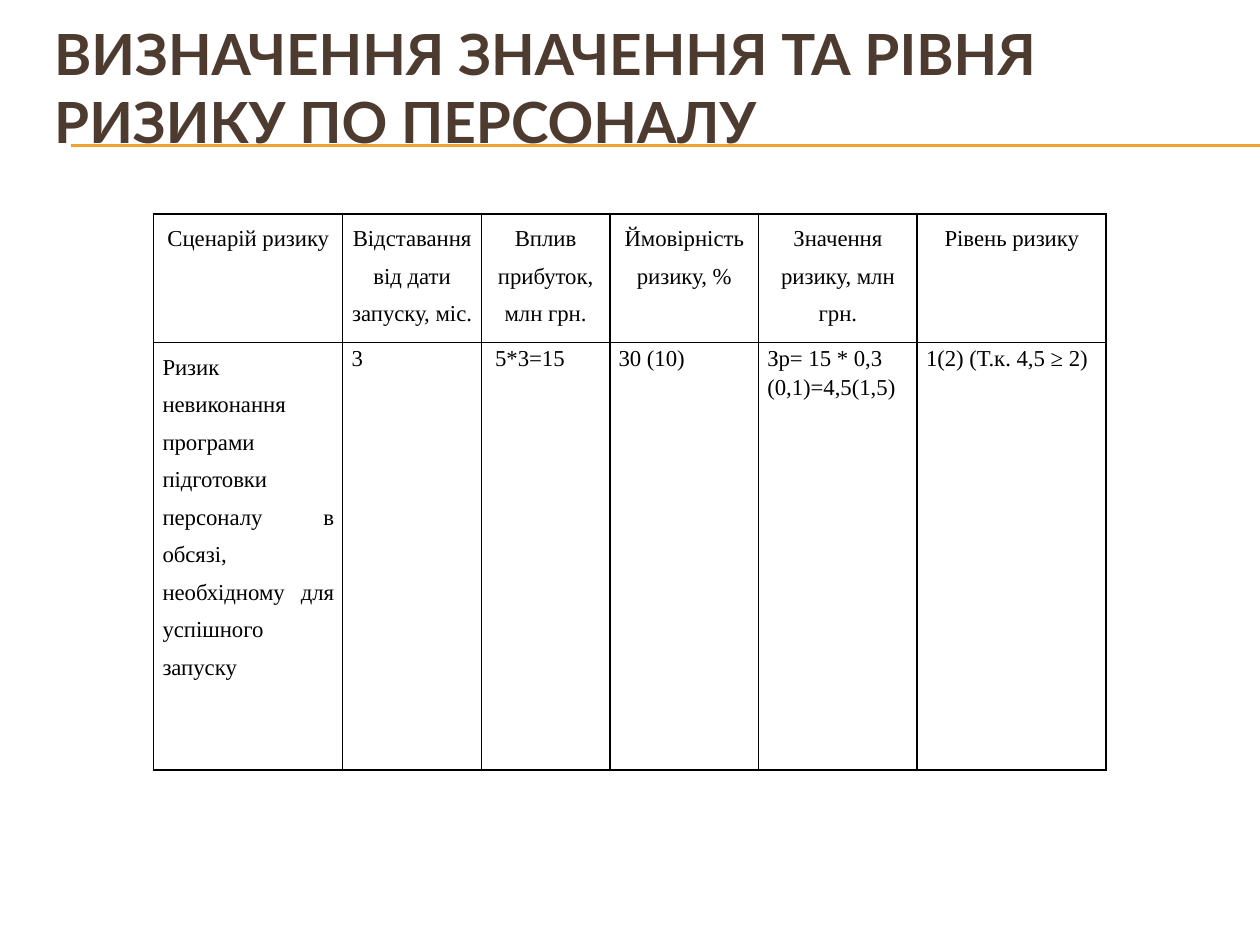
"""Build a slide with a table of staff risk value and level."""
from lxml.etree import SubElement
from pptx import Presentation
from pptx.dml.color import RGBColor
from pptx.enum.shapes import MSO_CONNECTOR as Connector
from pptx.enum.text import MSO_ANCHOR as Anchor, PP_ALIGN as Align
from pptx.oxml.ns import qn
from pptx.util import Inches, Pt

COLUMNS, ROWS = 100, 75


def colour(code):
    return RGBColor.from_string(code)


class RiskSlide:
    title_font, table_font = "Lato", "Times New Roman"
    title_colour, rule_colour, ink = "4E3B30", "F0A22E", "000000"
    title_size, table_size = 32.4, 13

    def __init__(self, deck):
        self.column = deck.slide_width / COLUMNS
        self.row = deck.slide_height / ROWS
        self.slide = deck.slides.add_slide(deck.slide_layouts[5])

    def place(self, left, top, width, height):
        return (round(left * self.column), round(top * self.row),
                round(width * self.column), round(height * self.row))

    def style(self, paragraph, font, size, code, align, spacing, bold=False):
        paragraph.alignment, paragraph.line_spacing = align, spacing
        paragraph.font.name, paragraph.font.size = font, Pt(size)
        paragraph.font.bold = bold
        paragraph.font.color.rgb = colour(code)

    def title(self, text, area):
        box = self.slide.shapes.title
        box.left, box.top, box.width, box.height = self.place(*area)
        frame = box.text_frame
        frame.text = text
        frame.word_wrap = True
        frame.vertical_anchor = Anchor.MIDDLE
        frame.margin_bottom = Inches(0.59)
        paragraph = frame.paragraphs[0]
        paragraph.space_before = Pt(0)
        self.style(paragraph, self.title_font, self.title_size,
                   self.title_colour, Align.LEFT, 1.0, True)
        self.slide.shapes.element.append(box.element)

    def rule(self, left, right, level):
        x, y, width, _ = self.place(left, level, right - left, 0)
        line = self.slide.shapes.add_connector(
            Connector.STRAIGHT, x, y, x + width, y)
        line.line.color.rgb = colour(self.rule_colour)
        line.line.width = Pt(0.75)
        SubElement(line.element.spPr, qn("a:effectLst"))

    def borders(self, cell):
        properties = cell._tc.get_or_add_tcPr()
        for side in ("lnL", "lnR", "lnT", "lnB"):
            edge = SubElement(properties, qn(f"a:{side}"), w=str(Pt(1)))
            fill = SubElement(edge, qn("a:solidFill"))
            SubElement(fill, qn("a:srgbClr"), val=self.ink)

    def cell(self, cell, text, align, spacing, indent=0):
        cell.text = text
        cell.margin_left = Inches(0.07 + indent)
        cell.margin_right = Inches(0.07)
        cell.margin_top = cell.margin_bottom = 0
        self.style(cell.text_frame.paragraphs[0], self.table_font,
                   self.table_size, self.ink, align, spacing)
        self.borders(cell)
        cell.fill.background()

    def table(self, left, top, widths, heights, header, values):
        area = self.place(left, top, sum(widths), sum(heights))
        table = self.slide.shapes.add_table(
            len(heights), len(widths), *area).table
        table.first_row = table.horz_banding = False
        for column, width in zip(table.columns, widths):
            column.width = round(width * self.column)
        for row, height in zip(table.rows, heights):
            row.height = round(height * self.row)
        for index, text in enumerate(header):
            self.cell(table.cell(0, index), text, Align.CENTER, 1.5)
        scenario, *figures = values
        self.cell(table.cell(1, 0), scenario, Align.JUSTIFY, 1.5)
        for index, text in enumerate(figures, 1):
            indent = 0.04 if index == 2 else 0
            self.cell(table.cell(1, index), text, Align.LEFT, 1.15, indent)


def main():
    deck = Presentation()
    deck.slide_width, deck.slide_height = Inches(10), Inches(7.5)
    page = RiskSlide(deck)
    for level in (11.5, 11.6):
        page.rule(5.6, COLUMNS, level)
    page.title("ВИЗНАЧЕННЯ ЗНАЧЕННЯ ТА РІВНЯ РИЗИКУ ПО ПЕРСОНАЛУ",
               (3.3, 5, 83.7, 9.2))
    page.table(
        12.2, 17, (15, 11, 10.2, 11.8, 12.6, 15), (10.2, 33.9),
        ("Сценарій ризику", "Відставання від дати запуску, міс.",
         "Вплив прибуток, млн грн.", "Ймовірність ризику, %",
         "Значення ризику, млн грн.", "Рівень ризику"),
        ("Ризик невиконання програми підготовки персоналу в обсязі, "
         "необхідному для успішного запуску", "3", "5*3=15", "30 (10)",
         "Зр= 15 * 0,3 (0,1)=4,5(1,5)", "1(2) (Т.к. 4,5 ≥ 2)"))
    deck.save("out.pptx")


if __name__ == "__main__":
    main()
